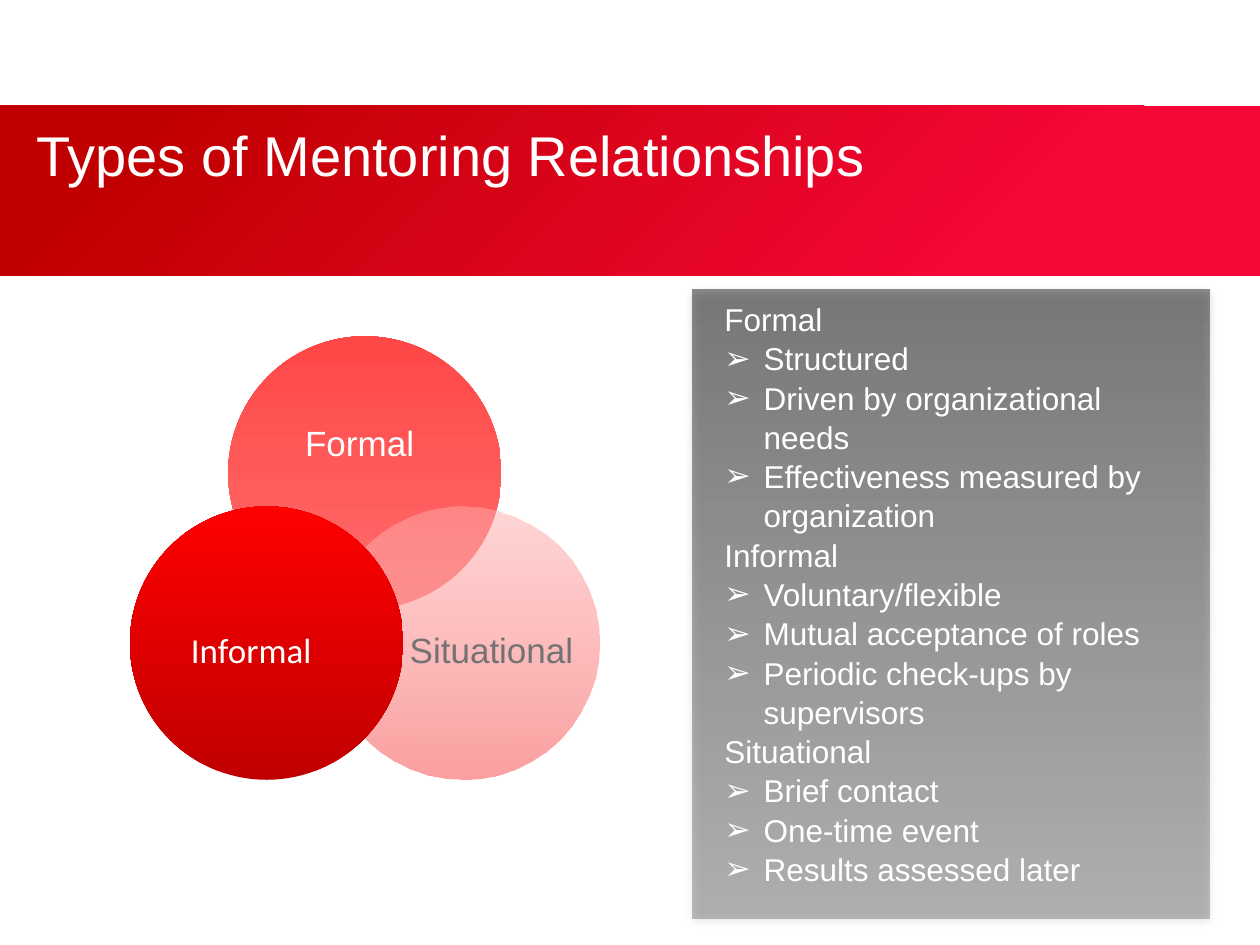
from lxml import etree
from pptx import Presentation
from pptx import util as u
from pptx.dml.color import RGBColor
from pptx.enum import shapes, text
from pptx.oxml import ns

WHITE = RGBColor(0xFF, 0xFF, 0xFF)
BLACK = RGBColor(0x00, 0x00, 0x00)
GREY = RGBColor(0x73, 0x73, 0x73)
COAL = RGBColor(0x17, 0x17, 0x17)
ASH = RGBColor(0x3A, 0x3A, 0x3A)
CRIMSON = RGBColor(0xF5, 0x07, 0x36)
DARK = RGBColor(0xC0, 0x00, 0x00)
RED = RGBColor(0xFF, 0x00, 0x00)
CORAL = RGBColor(0xFF, 0x6D, 0x6D)
TOMATO = RGBColor(0xFF, 0x47, 0x47)
ROSE = RGBColor(0xFB, 0x93, 0x93)
PINK = RGBColor(0xFF, 0xAB, 0xAB)

LEFT, MID, RIGHT = text.PP_ALIGN.LEFT, text.PP_ALIGN.CENTER, text.PP_ALIGN.RIGHT
TOP, CENTRE = text.MSO_ANCHOR.TOP, text.MSO_ANCHOR.MIDDLE
RECT, OVAL = shapes.MSO_SHAPE.RECTANGLE, shapes.MSO_SHAPE.OVAL


def node(root, tag, **attrs):
    """Add a drawing element below root."""
    return etree.SubElement(root, ns.qn("a:" + tag), {k: str(v) for k, v in attrs.items()})


def tint(root, color, alpha):
    """Add a colour with its opacity in percent."""
    item = node(root, "srgbClr", val=color)
    if alpha < 100:
        node(item, "alpha", val=alpha * 1000)


def write(para, words, size=18, font="Arial", color=WHITE, align=LEFT,
          space=1.0, after=0, bullet=None):
    """Put formatted text in a paragraph."""
    run = para.add_run()
    run.text = words
    run.font.size, run.font.name = u.Pt(size), font
    run.font.color.rgb = color
    para.alignment, para.line_spacing = align, space
    para.space_before, para.space_after = u.Pt(0), u.Pt(after)
    props = para._p.get_or_add_pPr()
    hang = u.Cm(0.79) if bullet else 0
    props.set("marL", str(hang))
    props.set("indent", str(-hang))
    if bullet:
        node(props, "buFont", typeface="Arial")
        node(props, "buChar", char=bullet)
    else:
        node(props, "buNone")


class Pen:
    """Holds the style and the current slide."""

    def __init__(self, slide):
        self.slide = slide
        self.host = slide.shapes

    def group(self):
        self.host = self.slide.shapes.add_group_shape().shapes

    def shape(self, kind, box, stops, angle, shade=False):
        """Draw a shape with a gradient of (place, colour, opacity) stops."""
        item = self.host.add_shape(kind, *map(u.Cm, box))
        item.line.fill.background()
        item.shadow.inherit = False
        item.fill.background()
        props = item.element.spPr
        grad = etree.Element(ns.qn("a:gradFill"), rotWithShape="1")
        props.replace(props.find(ns.qn("a:noFill")), grad)
        row = node(grad, "gsLst")
        for place, color, alpha in stops:
            tint(node(row, "gs", pos=place * 1000), color, alpha)
        node(grad, "lin", ang=angle * 60000, scaled=0)
        if shade:
            cast = node(props.find(ns.qn("a:effectLst")), "outerShdw", blurRad=u.Pt(5),
                        dist=u.Pt(1.8), dir=90 * 60000, rotWithShape=0)
            tint(cast, BLACK, 35)

    def label(self, box, words, **form):
        """Add a centred text box without margins."""
        frame = self.host.add_textbox(*map(u.Cm, box)).text_frame
        frame.word_wrap = True
        frame.vertical_anchor = CENTRE
        frame.margin_left = frame.margin_right = 0
        frame.margin_top = frame.margin_bottom = 0
        write(frame.paragraphs[0], words, size=20, space=0.9, after=7, **form)

    def place(self, holder, box):
        """Move a placeholder into its box and to the front."""
        holder.left, holder.top, holder.width, holder.height = map(u.Cm, box)
        holder.element.getparent().append(holder.element)
        frame = holder.text_frame
        frame.word_wrap = True
        frame.vertical_anchor = TOP
        frame.auto_size = text.MSO_AUTO_SIZE.NONE
        return frame

    def title(self, box, words):
        frame = self.place(self.slide.shapes.title, box)
        write(frame.paragraphs[0], words, size=32)

    def body(self, box, parts):
        """Fill the list with headings and their bulleted points."""
        frame = self.place(self.slide.placeholders[1], box)
        frame.auto_size = text.MSO_AUTO_SIZE.SHAPE_TO_FIT_TEXT
        lines = []
        for head, points in parts.items():
            lines += [(head, None)] + [(point, "➢") for point in points]
        for i, (words, mark) in enumerate(lines):
            para = frame.add_paragraph() if i else frame.paragraphs[0]
            write(para, words, space=1.04, bullet=mark)


PARTS = {
    "Formal": ["Structured", "Driven by organizational needs",
               "Effectiveness measured by organization"],
    "Informal": ["Voluntary/flexible", "Mutual acceptance of roles",
                 "Periodic check-ups by supervisors"],
    "Situational": ["Brief contact", "One-time event", "Results assessed later"],
}

# Circle corner, bottom and top colour, label box, label and its format
SIZE = 5.51
RINGS = [
    ((4.6, 6.78), (CORAL, 100), (TOMATO, 100), (5.33, 7.75, 4.04, 2.46),
     "Formal ", dict(align=MID)),
    ((6.58, 10.21), (ROSE, 88), (PINK, 50), (8.25, 11.63, 3.32, 3.02),
     "Situational ", dict(align=MID, color=GREY)),
    ((2.62, 10.21), (DARK, 100), (RED, 100), (3.12, 11.63, 3.32, 3.02),
     "Informal ", dict(align=RIGHT, font="Calibri")),
]


def main():
    deck = Presentation()
    deck.slide_width, deck.slide_height = u.Cm(25.4), u.Cm(19.05)
    pen = Pen(deck.slides.add_slide(deck.slide_layouts[1]))

    # Title band and list panel
    pen.shape(RECT, (0, 2.13, 25.4, 3.43),
              [(11, CRIMSON, 100), (20, CRIMSON, 100), (89, DARK, 100)], 225)
    pen.shape(RECT, (13.97, 5.84, 10.41, 12.67),
              [(0, COAL, 49), (100, ASH, 31)], 90, shade=True)

    # List and title
    pen.body((14.35, 5.89, 9.27, 12.4), PARTS)
    pen.title((0.48, 2.31, 19.84, 3.02), "Types of Mentoring Relationships")

    # Overlapping circles
    pen.group()
    for corner, low, high, box, words, form in RINGS:
        pen.shape(OVAL, (*corner, SIZE, SIZE), [(0, *low), (100, *high)], 270)
        pen.label(box, words, **form)

    deck.save("out.pptx")


if __name__ == "__main__":
    main()
